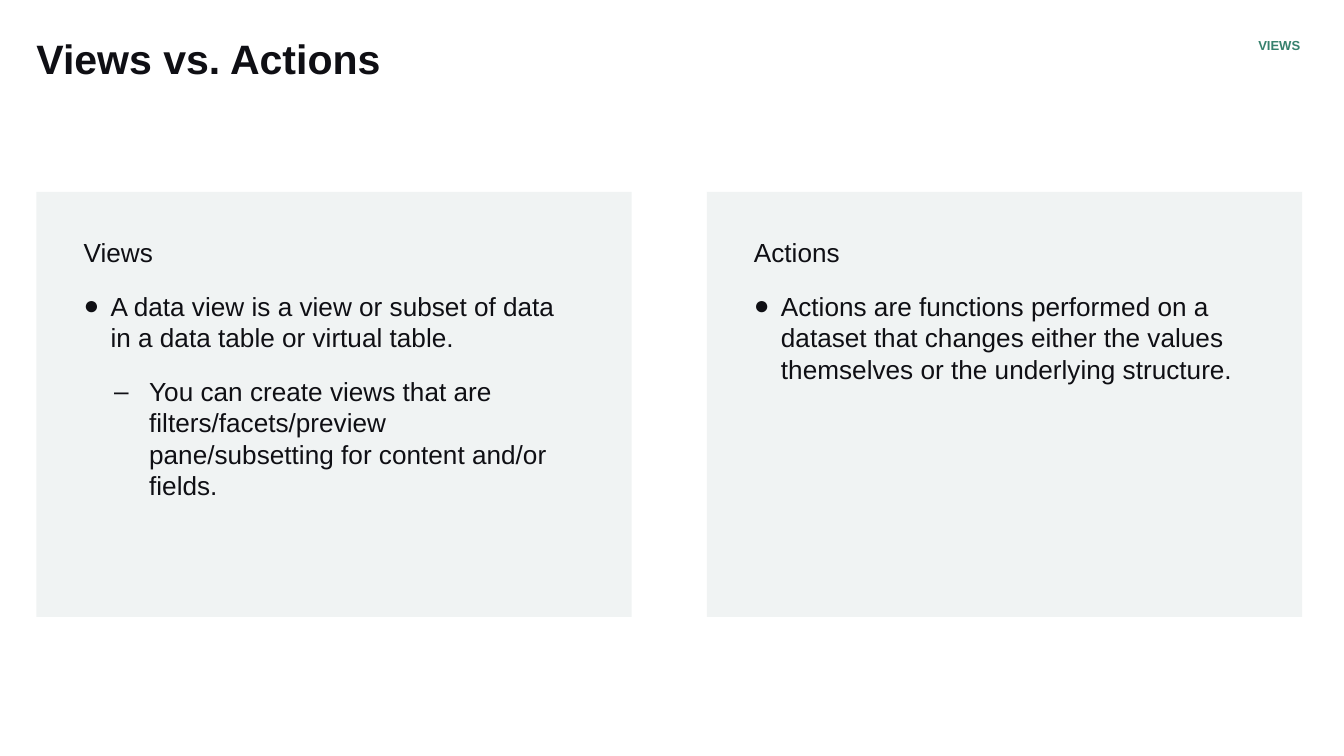
import pptx
import pptx.dml.color
import pptx.enum.shapes
import pptx.enum.text
import pptx.oxml.ns
import pptx.util
from lxml import etree
from pptx.util import Cm

INK, GREEN, PANEL = "0F0F14", "37816E", "F0F3F3"
BULLETS = {1: ("●", Cm(0.51), Cm(-0.51)), 2: ("–", Cm(1.24), Cm(-0.66))}


def rgb(value):
    return pptx.dml.color.RGBColor.from_string(value)


def add_bullet(p, level, color):
    char, margin, indent = BULLETS[level]
    p.level = level - 1
    pPr = p._p.get_or_add_pPr()
    pPr.set("marL", str(margin))
    pPr.set("indent", str(indent))
    qn = pptx.oxml.ns.qn
    clr = etree.SubElement(pPr, qn("a:buClr"))
    etree.SubElement(clr, qn("a:srgbClr"), val=color)
    etree.SubElement(pPr, qn("a:buFont"), typeface="Arial")
    etree.SubElement(pPr, qn("a:buChar"), char=char)


def write(p, text, size=14, color=INK, bold=False, bullet=0,
          before=None, spacing=None, align=None):
    if bullet:
        add_bullet(p, bullet, color)
    if before is not None:
        p.space_before = pptx.util.Pt(before)
    if spacing is not None:
        p.line_spacing = spacing
    if align is not None:
        p.alignment = align
    r = p.add_run()
    r.text = text
    r.font.name = "Arial"
    r.font.size = pptx.util.Pt(size)
    r.font.bold = bold
    r.font.color.rgb = rgb(color)


def add_text_frame(s, left, top, width, height, inset_top=0, inset_right=0.25):
    tf = s.shapes.add_textbox(Cm(left), Cm(top), Cm(width), Cm(height)).text_frame
    tf.word_wrap = True
    tf.margin_left = 0
    tf.margin_top = Cm(inset_top)
    tf.margin_right = Cm(inset_right)
    tf.margin_bottom = Cm(0.25)
    return tf


def add_panel(s, left, heading, points):
    sp = s.shapes.add_shape(pptx.enum.shapes.MSO_SHAPE.RECTANGLE,
                            Cm(left), Cm(3.63), Cm(11.25), Cm(8.03))
    sp.shadow.inherit = False
    sp.fill.solid()
    sp.fill.fore_color.rgb = rgb(PANEL)
    sp.line.fill.background()

    tf = add_text_frame(s, left + 0.89, 4.22, 9.45, 6.5, inset_top=0.25)
    write(tf.paragraphs[0], heading)
    for level, text in points:
        write(tf.add_paragraph(), text, bullet=level, before=12)


def main():
    prs = pptx.Presentation()
    prs.slide_width, prs.slide_height = Cm(25.4), Cm(14.29)
    s = prs.slides.add_slide(prs.slide_layouts[6])

    # Title
    tf = add_text_frame(s, 0.69, 0.74, 20.29, 1.5)
    write(tf.paragraphs[0], "Views vs. Actions", size=22, bold=True, spacing=0.9)

    # Comparison panels
    add_panel(s, 0.69, "Views", [
        (1, "A data view is a view or subset of data in a data table or virtual table."),
        (2, "You can create views that are filters/facets/preview pane/subsetting "
            "for content and/or fields."),
    ])
    add_panel(s, 13.36, "Actions", [
        (1, "Actions are functions performed on a dataset that changes either "
            "the values themselves or the underlying structure."),
    ])

    # Section label
    tf = add_text_frame(s, 19.23, 0.74, 5.41, 0.41, inset_right=0)
    write(tf.paragraphs[0], "VIEWS ", size=7, color=GREEN, bold=True,
          spacing=0.9, align=pptx.enum.text.PP_ALIGN.RIGHT)

    prs.save("out.pptx")


if __name__ == "__main__":
    main()
